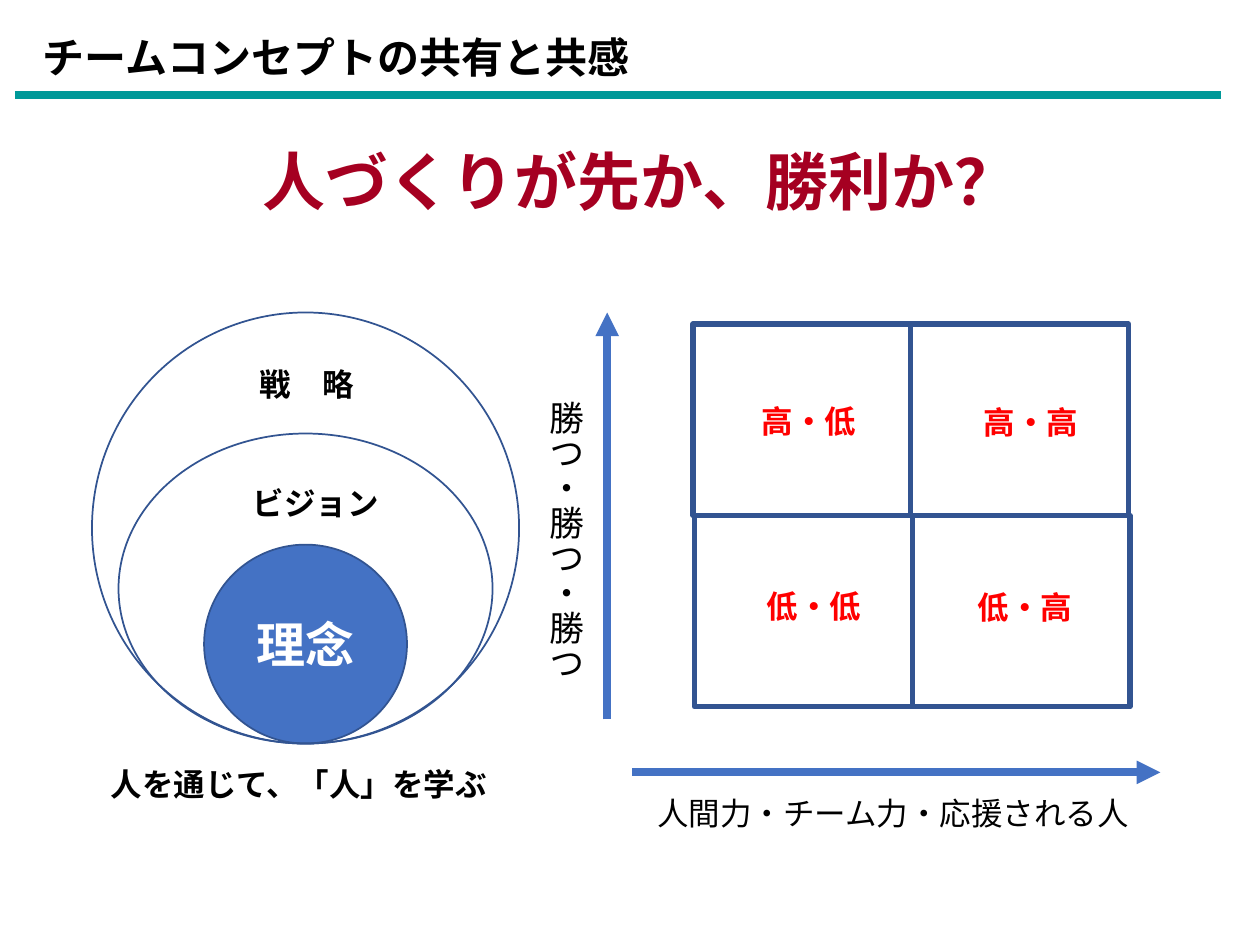
from dataclasses import dataclass
from typing import Optional

from lxml import etree
from pptx import Presentation
from pptx.dml.color import RGBColor
from pptx.enum.shapes import MSO_CONNECTOR, MSO_SHAPE
from pptx.enum.text import MSO_ANCHOR, MSO_AUTO_SIZE, PP_ALIGN
from pptx.oxml.ns import qn
from pptx.util import Cm, Pt

OVAL, RECT = MSO_SHAPE.OVAL, MSO_SHAPE.RECTANGLE
STRAIGHT = MSO_CONNECTOR.STRAIGHT
MIDDLE, CENTER = MSO_ANCHOR.MIDDLE, PP_ALIGN.CENTER
FIT_SHAPE = MSO_AUTO_SIZE.SHAPE_TO_FIT_TEXT

JP_FONT = "Noto Sans CJK JP"
BLUE, NAVY, TEAL = "4472C4", "325491", "009999"
BLACK, WHITE, RED, CRIMSON = "000000", "FFFFFF", "FF0000", "A50021"


@dataclass
class Label:
    text: str
    x: float
    y: float
    w: float
    h: float = 1.02
    size: int = 18
    color: str = BLACK
    bold: bool = True
    wrap: bool = False
    vertical: bool = False


@dataclass
class Ring:
    w: float
    h: float
    fill: Optional[str] = None
    text: str = ""


@dataclass
class Line:
    x1: float
    y1: float
    x2: float
    y2: float
    color: str = BLUE
    arrow: bool = True


RING_CENTER, RING_BOTTOM = 6.16, 14.99
RINGS = [Ring(4.09, 4.01, BLUE, "理念"), Ring(7.54, 6.25), Ring(8.61, 8.69)]

GRID_X, GRID_Y, CELL_W, CELL_H, ROW_SHIFT = 13.97, 6.53, 4.39, 3.86, 0.03

LINES = [
    Line(12.24, 14.5, 12.24, 6.3),
    Line(12.75, 15.57, 23.39, 15.57),
    Line(0.3, 1.91, 24.61, 1.91, TEAL, arrow=False),
]

LABELS = [
    Label("ビジョン", 4.85, 9.63, 3.07),
    Label("戦　略", 4.98, 7.24, 2.44),
    Label("人間力・チーム力・応援される人", 13, 15.88, 10.13, bold=False),
    Label("勝つ・勝つ・勝つ", 10.59, 7.82, 1.37, 5.94, 20, bold=False, vertical=True),
    Label("高・高", 19.58, 8, 2.44, color=RED),
    Label("高・低", 15.11, 7.98, 2.44, color=RED),
    Label("低・低", 15.21, 11.71, 2.44, color=RED),
    Label("低・高", 19.46, 11.73, 2.44, color=RED),
    Label("人を通じて、「人」を学ぶ", 1.98, 15.29, 8.48, wrap=True),
    Label("チームコンセプトの共有と共感　", 0.61, 0.51, 20.17, 1.27, 24, wrap=True),
    Label("人づくりが先か、勝利か？", 5.05, 2.74, 15.9, 1.8, 36, CRIMSON),
]


def rgb(color: str) -> RGBColor:
    return RGBColor.from_string(color)


def write(tf, text: str, size: int, color: str, bold: bool, latin: str = JP_FONT):
    p = tf.paragraphs[0]
    r = p.add_run()
    r.text = text
    for name, value in {"size": Pt(size), "bold": bold, "name": latin}.items():
        setattr(r.font, name, value)
    r.font.color.rgb = rgb(color)
    ea = etree.SubElement(r._r.get_or_add_rPr(), qn("a:ea"))
    ea.set("typeface", JP_FONT)
    return p


def add_outlined(slide, kind, x: float, y: float, w: float, h: float,
                 fill: Optional[str], line_width: float):
    sp = slide.shapes.add_shape(kind, Cm(x), Cm(y), Cm(w), Cm(h))
    sp.shadow.inherit = False
    if fill:
        sp.fill.solid()
        sp.fill.fore_color.rgb = rgb(fill)
    else:
        sp.fill.background()
    sp.line.color.rgb = rgb(NAVY)
    sp.line.width = Pt(line_width)
    return sp


def add_ring(slide, ring: Ring) -> None:
    """Rings share a centre line and rest on the same bottom point."""
    sp = add_outlined(slide, OVAL, RING_CENTER - ring.w / 2, RING_BOTTOM - ring.h,
                      ring.w, ring.h, ring.fill, 1)
    if ring.text:
        sp.text_frame.vertical_anchor = MIDDLE
        p = write(sp.text_frame, ring.text, 28, WHITE, True, "Calibri")
        p.alignment = CENTER


def add_grid(slide) -> None:
    for row in range(2):
        for col in range(2):
            add_outlined(slide, RECT, GRID_X + col * CELL_W + row * ROW_SHIFT,
                         GRID_Y + row * CELL_H, CELL_W, CELL_H, WHITE, 3)


def add_line(slide, line: Line) -> None:
    cx = slide.shapes.add_connector(
        STRAIGHT, Cm(line.x1), Cm(line.y1), Cm(line.x2), Cm(line.y2))
    cx.line.color.rgb = rgb(line.color)
    cx.line.width = Pt(4.5)
    if line.arrow:
        tail = etree.SubElement(cx.line._get_or_add_ln(), qn("a:tailEnd"))
        tail.set("type", "triangle")
    etree.SubElement(cx._element.spPr, qn("a:effectLst"))


def add_label(slide, label: Label) -> None:
    tb = slide.shapes.add_textbox(
        Cm(label.x), Cm(label.y), Cm(label.w), Cm(label.h))
    tf = tb.text_frame
    tf.word_wrap = label.wrap
    tf.auto_size = FIT_SHAPE
    if label.vertical:
        tf._txBody.bodyPr.set("vert", "eaVert")
    write(tf, label.text, label.size, label.color, label.bold)


def main() -> None:
    prs = Presentation()
    prs.slide_width, prs.slide_height = Cm(25.4), Cm(19.05)
    slide = prs.slides.add_slide(prs.slide_layouts[6])
    for ring in RINGS:
        add_ring(slide, ring)
    add_grid(slide)
    for line in LINES:
        add_line(slide, line)
    for label in LABELS:
        add_label(slide, label)
    prs.save("out.pptx")


if __name__ == "__main__":
    main()
